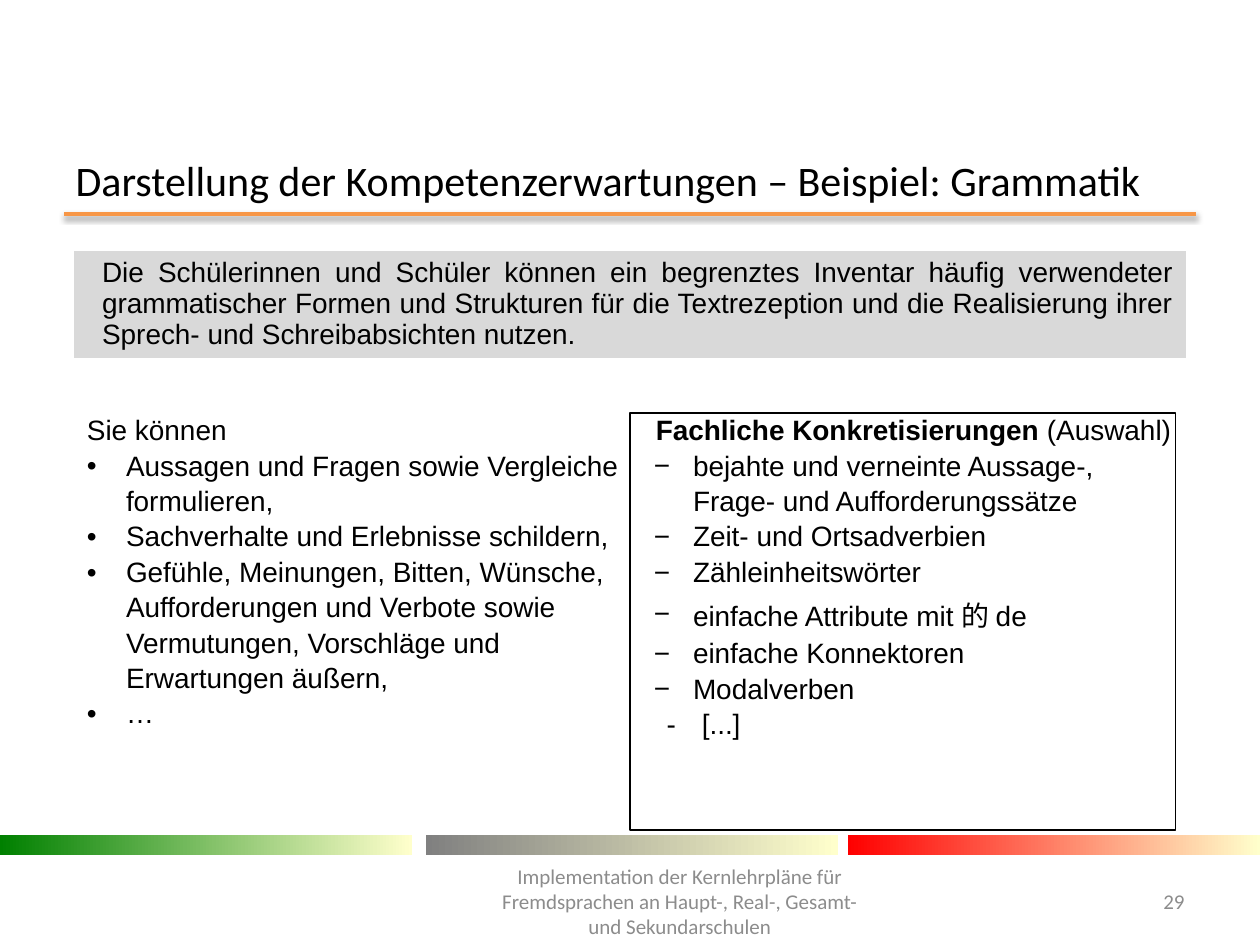
from dataclasses import dataclass

from lxml.etree import SubElement
from pptx import Presentation
from pptx.dml.color import RGBColor
from pptx.enum.shapes import MSO_CONNECTOR as Connector, MSO_SHAPE as Shape
from pptx.enum.text import MSO_ANCHOR as Anchor, PP_ALIGN as Align
from pptx.oxml.ns import qn
from pptx.util import Inches, Pt

COLORS = {
    "black": "000000", "muted": "8C8C8C", "orange": "F79646", "panel": "D9D9D9",
    "white": "FFFFFF", "cream": "FFFFCC", "green": "008000", "gray": "808080",
    "red": "FF0000",
}
PLAIN_TABLE_STYLE = "{2D5ABB26-0587-4C30-8999-92F81FD0307C}"
COLUMN_WIDTHS = (4.5, 4.32)
ROW_HEIGHTS = (0.84, 0.37, 3.3)


@dataclass
class Bar:
    left: float
    color: str


@dataclass
class Footer:
    left: float
    width: float
    text: str
    alignment: Align


@dataclass
class Item:
    text: str
    bullet: str
    indent: float = 0.31
    hanging: float = 0.31


BARS = [Bar(0, "green"), Bar(3.38, "gray"), Bar(6.73, "red")]
FOOTERS = [
    Footer(3.82, 3.15, "Implementation der Kernlehrpläne für Fremdsprachen an "
           "Haupt-, Real-, Gesamt- und Sekundarschulen", Align.CENTER),
    Footer(8.86, 0.64, "29", Align.RIGHT),
]
TITLE = "Darstellung der Kompetenzerwartungen – Beispiel: Grammatik"
SUMMARY = (
    "Die Schülerinnen und Schüler können ein begrenztes Inventar häufig verwendeter "
    "grammatischer Formen und Strukturen für die Textrezeption und die Realisierung "
    "ihrer Sprech- und Schreibabsichten nutzen."
)
SKILLS = [Item(text, "•") for text in (
    "Aussagen und Fragen sowie Vergleiche formulieren,",
    "Sachverhalte und Erlebnisse schildern,",
    "Gefühle, Meinungen, Bitten, Wünsche, Aufforderungen und Verbote sowie "
    "Vermutungen, Vorschläge und Erwartungen äußern,",
    "…",
)]
DETAILS = [Item(text, "−") for text in (
    "bejahte und verneinte Aussage-, Frage- und Aufforderungssätze",
    "Zeit- und Ortsadverbien",
    "Zähleinheitswörter",
    "einfache Attribute mit 的 de",
    "einfache Konnektoren",
    "Modalverben",
)] + [Item("[...]", "-", 0.38, 0.28)]


def color(name: str) -> RGBColor:
    return RGBColor.from_string(COLORS[name])


def format_runs(paragraph, font: str, size: int, color_name: str = "black") -> None:
    for run in paragraph.runs:
        run.font.name = font
        run.font.size = Pt(size)
        run.font.color.rgb = color(color_name)


def add_rule(slide) -> None:
    rule = slide.shapes.add_connector(
        Connector.STRAIGHT, Inches(0.51), Inches(1.7), Inches(9.49), Inches(1.7))
    rule.line.color.rgb = color("orange")
    rule.line.width = Pt(2)
    effects = SubElement(rule._element.spPr, qn("a:effectLst"))
    shadow = SubElement(effects, qn("a:outerShdw"), blurRad="40000", dist="20000",
                        dir="5400000", rotWithShape="0")
    shade = SubElement(shadow, qn("a:srgbClr"), val=COLORS["black"])
    SubElement(shade, qn("a:alpha"), val="38000")


def add_bar(slide, bar: Bar) -> None:
    shape = slide.shapes.add_shape(
        Shape.RECTANGLE, Inches(bar.left), Inches(6.63), Inches(3.27), Inches(0.16))
    shape.shadow.inherit = False
    shape.line.fill.background()
    shape.fill.gradient()
    shape.fill.gradient_angle = 0
    for stop, name in zip(shape.fill.gradient_stops, (bar.color, "cream")):
        stop.color.rgb = color(name)


def add_footer(slide, footer: Footer) -> None:
    box = slide.shapes.add_textbox(
        Inches(footer.left), Inches(6.95), Inches(footer.width), Inches(0.4))
    frame = box.text_frame
    frame.word_wrap = True
    frame.vertical_anchor = Anchor.MIDDLE
    frame.text = footer.text
    frame.paragraphs[0].alignment = footer.alignment
    format_runs(frame.paragraphs[0], "Calibri", 12, "muted")


def set_title(slide) -> None:
    title = slide.shapes.title
    title.left, title.top = Inches(0.5), Inches(1.23)
    title.width, title.height = Inches(9), Inches(0.39)
    frame = title.text_frame
    frame.text = TITLE
    frame.vertical_anchor = Anchor.MIDDLE
    frame.paragraphs[0].alignment = Align.LEFT
    format_runs(frame.paragraphs[0], "Calibri", 24)


def add_items(cell, items: list[Item]) -> None:
    for item in items:
        paragraph = cell.text_frame.add_paragraph()
        paragraph.text = item.text
        paragraph.line_spacing = 1.14
        properties = paragraph._p.get_or_add_pPr()
        properties.set("marL", str(Inches(item.indent)))
        properties.set("indent", str(-Inches(item.hanging)))
        SubElement(properties, qn("a:buFont"), typeface="Arial")
        SubElement(properties, qn("a:buChar"), char=item.bullet)
        format_runs(paragraph, "Arial", 16)


def add_heading(cell, bold_text: str, plain_text: str, alignment: Align) -> None:
    paragraph = cell.text_frame.paragraphs[0]
    for text, bold in ((bold_text, True), (plain_text, False)):
        if text:
            run = paragraph.add_run()
            run.text = text
            run.font.bold = bold
    paragraph.alignment = alignment
    paragraph.line_spacing = 1.15
    format_runs(paragraph, "Arial", 16)


def add_competence_table(slide) -> None:
    table = slide.shapes.add_table(
        len(ROW_HEIGHTS), len(COLUMN_WIDTHS), Inches(0.59), Inches(1.99),
        Inches(sum(COLUMN_WIDTHS)), Inches(sum(ROW_HEIGHTS))).table
    table.first_row = table.horz_banding = False
    table._tbl.tblPr.find(qn("a:tableStyleId")).text = PLAIN_TABLE_STYLE
    for column, width in zip(table.columns, COLUMN_WIDTHS):
        column.width = Inches(width)
    for row, height in zip(table.rows, ROW_HEIGHTS):
        row.height = Inches(height)
    for row_index, fill_name in enumerate(("panel", "white")):
        first = table.cell(row_index, 0)
        first.merge(table.cell(row_index, 1))
        first.fill.solid()
        first.fill.fore_color.rgb = color(fill_name)
        first.margin_bottom = 0
    for column_index in range(len(COLUMN_WIDTHS)):
        spacer = table.cell(1, column_index)
        spacer.margin_top = spacer.margin_bottom = 0

    summary = table.cell(0, 0).text_frame
    summary.text = SUMMARY
    paragraph = summary.paragraphs[0]
    paragraph.alignment = Align.JUSTIFY
    paragraph._p.get_or_add_pPr().set("marL", str(Inches(0.12)))
    format_runs(paragraph, "Arial", 16)

    skills, details = table.cell(2, 0), table.cell(2, 1)
    for cell in (skills, details):
        cell.fill.background()
    add_heading(skills, "", "Sie können", Align.LEFT)
    add_items(skills, SKILLS)
    add_heading(details, "Fachliche Konkretisierungen", " (Auswahl)", Align.CENTER)
    add_items(details, DETAILS)


def add_frame(slide) -> None:
    frame = slide.shapes.add_shape(
        Shape.RECTANGLE, Inches(5), Inches(3.28), Inches(4.33), Inches(3.31))
    frame.shadow.inherit = False
    frame.fill.background()
    frame.line.color.rgb = color("black")
    frame.line.width = Pt(1)


def main() -> None:
    presentation = Presentation()
    presentation.slide_width, presentation.slide_height = Inches(10), Inches(7.5)
    slide = presentation.slides.add_slide(presentation.slide_layouts[5])
    add_rule(slide)
    for bar in BARS:
        add_bar(slide, bar)
    set_title(slide)
    for footer in FOOTERS:
        add_footer(slide, footer)
    add_competence_table(slide)
    add_frame(slide)
    presentation.save("out.pptx")


if __name__ == "__main__":
    main()
